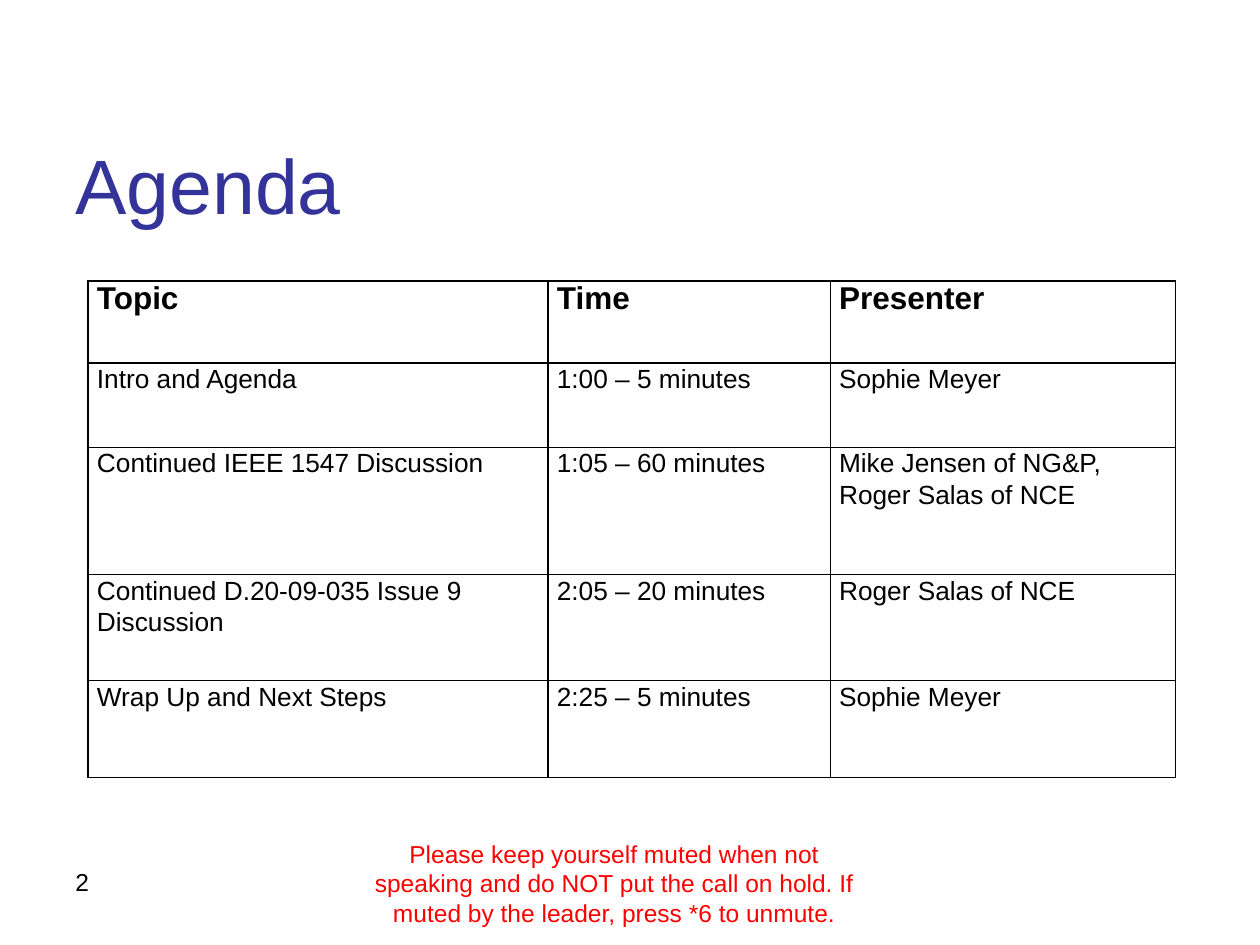
from typing import NamedTuple

from lxml.etree import SubElement
from pptx import Presentation
from pptx.dml.color import RGBColor
from pptx.enum.text import MSO_ANCHOR as Anchor, PP_ALIGN as Align
from pptx.oxml.ns import qn
from pptx.util import Inches, Pt

FONT = "Arial"
COLORS = {"title": "333399", "text": "000000", "notice": "FF0000", "border": "000000"}
COLUMN_WIDTHS = [3.65, 2.24, 2.74]


class AgendaRow(NamedTuple):
    height: float
    topic: str
    time: str
    presenter: str


class Label(NamedTuple):
    left: float
    top: float
    width: float
    height: float
    text: str
    size: int
    color: str
    align: Align = Align.LEFT
    anchor: Anchor = Anchor.TOP


AGENDA = [
    AgendaRow(0.65, "Topic", "Time", "Presenter"),
    AgendaRow(0.67, "Intro and Agenda", "1:00 – 5 minutes", "Sophie Meyer"),
    AgendaRow(1.01, "Continued IEEE 1547 Discussion", "1:05 – 60 minutes",
              "Mike Jensen of NG&P, Roger Salas of NCE"),
    AgendaRow(0.84, "Continued D.20-09-035 Issue 9 Discussion", "2:05 – 20 minutes",
              "Roger Salas of NCE"),
    AgendaRow(0.77, "Wrap Up and Next Steps", "2:25 – 5 minutes", "Sophie Meyer"),
]

LABELS = [
    Label(0.5, 0.92, 9, 1.08, "Agenda", 44, "title", anchor=Anchor.MIDDLE),
    Label(0.5, 6.83, 0.4, 0.52, "2", 14, "text"),
    Label(2.75, 6.61, 4.25, 0.52,
          "Please keep yourself muted when not speaking and do NOT put the call on hold. "
          "If muted by the leader, press *6 to unmute.", 14, "notice", Align.CENTER),
]


def write_text(frame, text: str, *, size: float, color: str = "text", bold: bool = False,
               align: Align = Align.LEFT, spacing: float = 1.0) -> None:
    frame.word_wrap = True
    para = frame.paragraphs[0]
    para.alignment = align
    para.line_spacing = spacing
    span = para.add_run()
    span.text = text
    span.font.name = FONT
    span.font.size = Pt(size)
    span.font.bold = bold
    span.font.color.rgb = RGBColor.from_string(COLORS[color])


def add_label(page, label: Label) -> None:
    box = page.shapes.add_textbox(Inches(label.left), Inches(label.top),
                                  Inches(label.width), Inches(label.height))
    box.text_frame.vertical_anchor = label.anchor
    write_text(box.text_frame, label.text, size=label.size, color=label.color, align=label.align)


def format_cell(cell) -> None:
    cell.margin_left = cell.margin_right = Inches(0.07)
    cell.margin_top = cell.margin_bottom = 0
    properties = cell._tc.get_or_add_tcPr()
    for side in ("a:lnL", "a:lnR", "a:lnT", "a:lnB"):
        line = SubElement(properties, qn(side), w=str(Pt(1)))
        fill = SubElement(line, qn("a:solidFill"))
        SubElement(fill, qn("a:srgbClr"), val=COLORS["border"])
    cell.fill.background()


def add_agenda(page) -> None:
    frame = page.shapes.add_table(len(AGENDA), len(COLUMN_WIDTHS), Inches(0.7), Inches(2.23),
                                  Inches(sum(COLUMN_WIDTHS)),
                                  Inches(sum(row.height for row in AGENDA)))
    table = frame.table
    table.horz_banding = False
    for column, width in zip(table.columns, COLUMN_WIDTHS):
        column.width = Inches(width)
    for index, (row, entry) in enumerate(zip(table.rows, AGENDA)):
        row.height = Inches(entry.height)
        header = index == 0
        for cell, text in zip(row.cells, entry[1:]):
            format_cell(cell)
            write_text(cell.text_frame, text, size=18 if header else 15, bold=header,
                       spacing=1.0 if header else 1.07)


def main() -> None:
    deck = Presentation()
    deck.slide_width, deck.slide_height = Inches(10), Inches(7.5)
    page = deck.slides.add_slide(deck.slide_layouts[6])
    add_agenda(page)
    for label in LABELS:
        add_label(page, label)
    deck.save("out.pptx")


if __name__ == "__main__":
    main()
